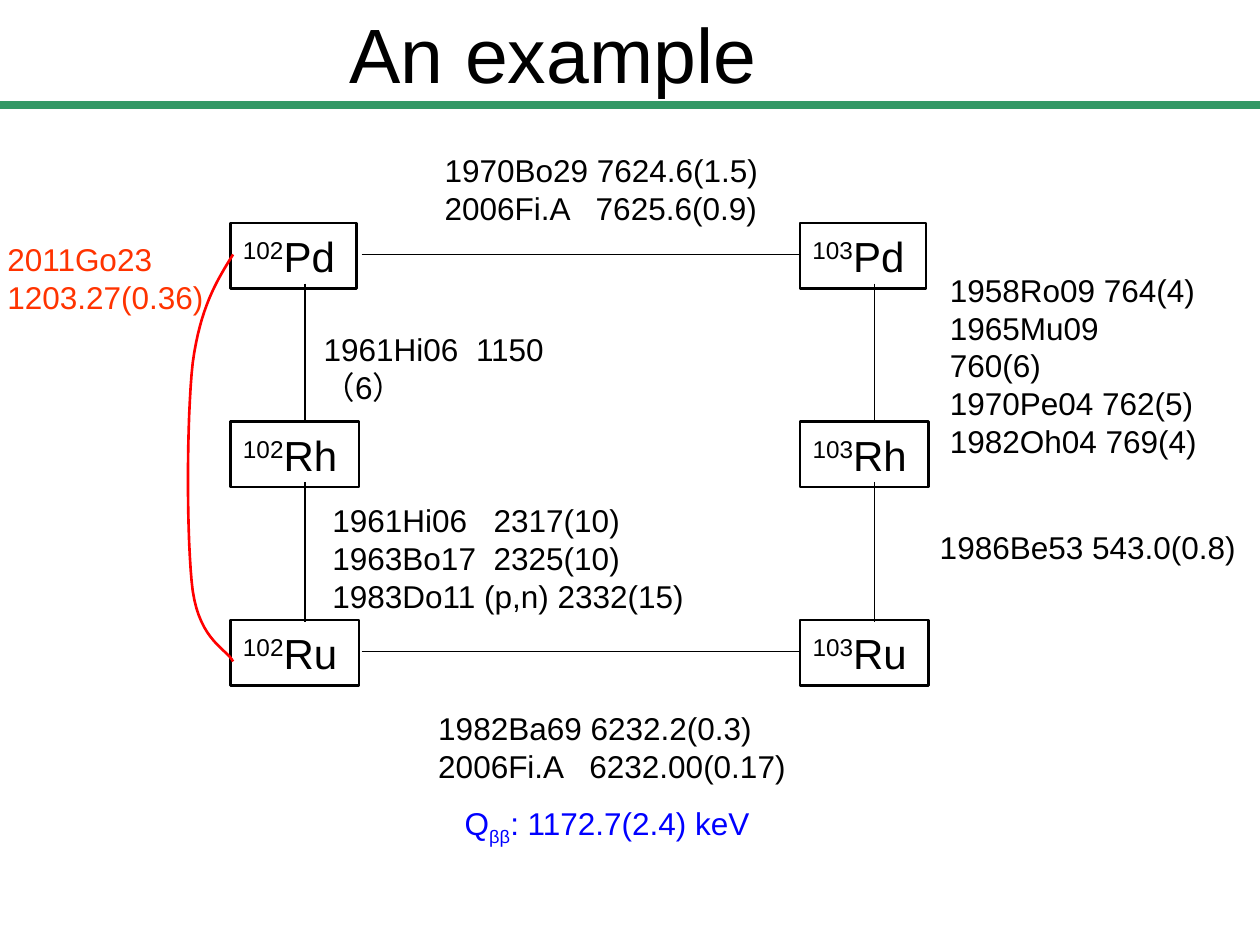
"""Build a slide of nuclide boxes joined by measured reaction energies."""
import pptx
import pptx.util
import pptx.dml.color
import pptx.enum.shapes
import pptx.enum.text
import lxml.etree

Inches = pptx.util.Inches
THEME = {
    "font": "Arial", "title": 44, "box": 24, "note": 18,
    "black": "000000", "green": "339966", "red": "FF0000",
    "orange": "FF3300", "blue": "0000FF",
}


def style(frame, size, color):
    for para in frame.paragraphs:
        for run in para.runs:
            run.font.name = THEME["font"]
            run.font.size = pptx.util.Pt(THEME[size])
            run.font.color.rgb = pptx.dml.color.RGBColor.from_string(THEME[color])


def join(x1, y1, x2, y2, color="black", width=0.75):
    line = slide.shapes.add_connector(
        pptx.enum.shapes.MSO_CONNECTOR.STRAIGHT,
        Inches(x1), Inches(y1), Inches(x2), Inches(y2))
    line.line.color.rgb = pptx.dml.color.RGBColor.from_string(THEME[color])
    line.line.width = pptx.util.Pt(width)
    props = line._element.spPr
    lxml.etree.SubElement(props, pptx.oxml.ns.qn("a:effectLst"))


deck = pptx.Presentation()
deck.slide_width, deck.slide_height = Inches(10), Inches(7.5)
slide = deck.slides.add_slide(deck.slide_layouts[5])

title = slide.shapes.title
title.left, title.top = Inches(2.66), Inches(0)
title.width, title.height = Inches(3.46), Inches(0.84)
title.text_frame.text = "An example"
title.text_frame.word_wrap = False
title.text_frame.auto_size = pptx.enum.text.MSO_AUTO_SIZE.NONE
style(title.text_frame, "title", "black")
join(0, 0.83, 10, 0.83, "green", 4.5)

for mass, left in (("102", 1.83), ("103", 6.35)):
    for row, (name, width) in enumerate((("Pd", 1), ("Rh", 1.02), ("Ru", 1.02))):
        top = 1.77 + 1.575 * row
        box = slide.shapes.add_shape(
            pptx.enum.shapes.MSO_SHAPE.RECTANGLE,
            Inches(left), Inches(top), Inches(width), Inches(0.52))
        box.shadow.inherit = False
        box.fill.background()
        box.line.color.rgb = pptx.dml.color.RGBColor.from_string(THEME["black"])
        box.line.width = pptx.util.Pt(1.25)
        frame = box.text_frame
        frame.word_wrap = False
        para = frame.paragraphs[0]
        para.alignment = pptx.enum.text.PP_ALIGN.LEFT
        for text in (mass, name):
            para.add_run().text = text
        para.runs[0].font._element.set("baseline", "30000")
        style(frame, "box", "black")
        if row < 2:
            join(left + 0.59, top + 0.48, left + 0.59, top + 1.59)

for y in (2.02, 5.17):
    join(2.87, y, 6.34, y)

notes = [
    (2.47, 2.57, 2.4, 0.4, "black", 1.21, ["1961Hi06\t1150（6）"]),
    (7.36, 4.14, 2.55, 0.4, "black", None, ["1986Be53 543.0(0.8)"]),
    (3.43, 1.15, 2.8, 0.7, "black", 1.2,
     ["1970Bo29 7624.6(1.5)", "2006Fi.A\t7625.6(0.9)"]),
    (7.44, 2.1, 2.17, 1.6, "black", None,
     ["1958Ro09 764(4)", "1965Mu09 760(6)", "1970Pe04 762(5)", "1982Oh04 769(4)"]),
    (3.38, 5.58, 3.1, 0.7, "black", 1.2,
     ["1982Ba69 6232.2(0.3)", "2006Fi.A\t6232.00(0.17)"]),
    (2.54, 3.93, 3.2, 1.01, "black", 1.28,
     ["1961Hi06\t2317(10)", "1963Bo17\t2325(10)", "1983Do11 (p,n) 2332(15)"]),
    (-0.04, 1.86, 1.76, 0.7, "orange", None, ["2011Go23", "1203.27(0.36)"]),
    (3.59, 6.33, 2.56, 0.4, "blue", None, ["Q"]),
]
for left, top, width, height, color, stop, rows in notes:
    note = slide.shapes.add_textbox(
        Inches(left), Inches(top), Inches(width), Inches(height))
    frame = note.text_frame
    frame.word_wrap = stop is not None
    frame.text = "\n".join(rows)
    if stop:
        for para in frame.paragraphs:
            tabs = lxml.etree.SubElement(
                para._p.get_or_add_pPr(), pptx.oxml.ns.qn("a:tabLst"))
            lxml.etree.SubElement(
                tabs, pptx.oxml.ns.qn("a:tab"), pos=str(Inches(stop)), algn="l")
    if color == "blue":
        para = frame.paragraphs[0]
        for text in ("ββ", ": 1172.7(2.4) keV"):
            para.add_run().text = text
        para.runs[1].font._element.set("baseline", "-25000")
    style(frame, "note", color)

start = (1.85, 2.02)
curves = [
    ((1.72, 2.23), (1.59, 2.44), (1.53, 2.88)),
    ((1.48, 3.33), (1.48, 4.3), (1.53, 4.69)),
    ((1.59, 5.09), (1.8, 5.15), (1.85, 5.25)),
]
steps = 16
points = []
last = start
for one, two, end in curves:
    for step in range(1, steps + 1):
        t = step / steps
        points.append(tuple(
            Inches((1 - t) ** 3 * a + 3 * (1 - t) ** 2 * t * b
                   + 3 * (1 - t) * t ** 2 * c + t ** 3 * d)
            for a, b, c, d in zip(last, one, two, end)))
    last = end
pen = slide.shapes.build_freeform(Inches(start[0]), Inches(start[1]))
pen.add_line_segments(points, close=False)
arc = pen.convert_to_shape()
arc.shadow.inherit = False
arc.fill.background()
arc.line.color.rgb = pptx.dml.color.RGBColor.from_string(THEME["red"])
arc.line.width = pptx.util.Pt(1.5)

deck.save("out.pptx")
